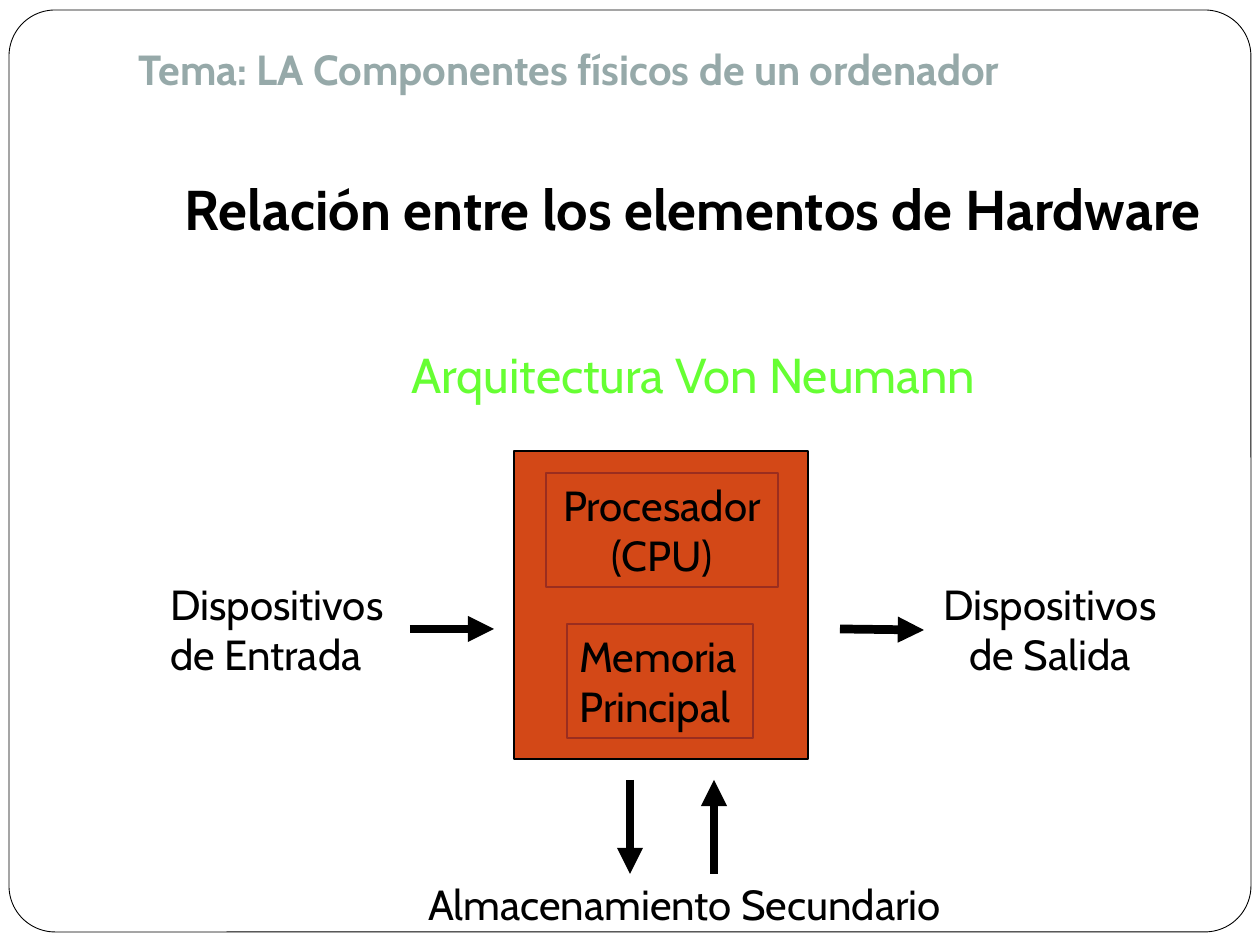
from dataclasses import dataclass
from typing import Optional

import lxml.etree
import pptx
import pptx.dml.color
import pptx.enum.shapes
import pptx.enum.text
import pptx.oxml.ns
import pptx.util

EMU_PER_PX = 914400 / 126
FONT = "Cabin"
BLACK = "000000"
WHITE = "FFFFFF"
BRICK = "D34817"
MAROON = "9B2D1F"
SHAPE = pptx.enum.shapes.MSO_SHAPE
LEFT = pptx.enum.text.PP_ALIGN.LEFT
CENTER = pptx.enum.text.PP_ALIGN.CENTER


@dataclass(frozen=True)
class Box:
    left: int
    top: int
    width: int
    height: int


@dataclass(frozen=True)
class Label:
    text: str
    box: Box
    align: int = CENTER
    size: int = 24
    color: str = BLACK
    bold: bool = False
    wrap: bool = False
    outline: Optional[str] = None


@dataclass(frozen=True)
class Arrow:
    x1: int
    y1: int
    x2: int
    y2: int


HEADING = Label("Relación entre los elementos de Hardware",
                Box(126, 168, 1134, 147), size=32, bold=True, wrap=True)

LABELS = [
    Label("Tema: LA Componentes físicos de un ordenador",
          Box(126, 37, 1028, 63), LEFT, color="96A9A9", bold=True),
    Label("Arquitectura Von Neumann", Box(126, 338, 1134, 72),
          size=28, color="66FF33", wrap=True),
    Label("Dispositivos\nde Entrada", Box(158, 572, 243, 113), LEFT),
    Label("Dispositivos de Salida", Box(924, 572, 252, 113), wrap=True),
    Label("Almacenamiento Secundario", Box(410, 872, 549, 63)),
    Label("Procesador\n(CPU)", Box(546, 473, 232, 114), outline=MAROON),
    Label("Memoria\nPrincipal", Box(567, 624, 186, 114), LEFT, outline=MAROON),
]

ARROWS = [
    Arrow(410, 629, 494, 629),
    Arrow(840, 629, 924, 630),
    Arrow(714, 874, 714, 780),
    Arrow(630, 780, 630, 874),
]


def px(length: int) -> int:
    return round(length * EMU_PER_PX)


def rgb(color: str) -> pptx.dml.color.RGBColor:
    return pptx.dml.color.RGBColor.from_string(color)


def place(box: Box) -> tuple[int, int, int, int]:
    return px(box.left), px(box.top), px(box.width), px(box.height)


def write(shape, label: Label) -> None:
    frame = shape.text_frame
    frame.text = label.text
    frame.word_wrap = label.wrap
    frame.auto_size = pptx.enum.text.MSO_AUTO_SIZE.NONE
    frame.vertical_anchor = pptx.enum.text.MSO_ANCHOR.TOP
    for paragraph in frame.paragraphs:
        paragraph.alignment = label.align
        for run in paragraph.runs:
            run.font.name = FONT
            run.font.size = pptx.util.Pt(label.size)
            run.font.bold = label.bold
            run.font.color.rgb = rgb(label.color)


def add_panel(slide, preset: int, box: Box, fill: Optional[str],
              line: str, weight: float):
    panel = slide.shapes.add_shape(preset, *place(box))
    panel.shadow.inherit = False
    if fill:
        panel.fill.solid()
        panel.fill.fore_color.rgb = rgb(fill)
    else:
        panel.fill.background()
    panel.line.color.rgb = rgb(line)
    panel.line.width = pptx.util.Pt(weight)
    return panel


def add_label(slide, label: Label) -> None:
    if label.outline:
        shape = add_panel(slide, SHAPE.RECTANGLE, label.box, None,
                          label.outline, 0.75)
    else:
        shape = slide.shapes.add_textbox(*place(label.box))
    write(shape, label)


def add_arrow(slide, arrow: Arrow) -> None:
    connector = slide.shapes.add_connector(
        pptx.enum.shapes.MSO_CONNECTOR.STRAIGHT,
        px(arrow.x1), px(arrow.y1), px(arrow.x2), px(arrow.y2))
    connector.line.color.rgb = rgb(BLACK)
    connector.line.width = pptx.util.Pt(5)
    qn = pptx.oxml.ns.qn
    properties = connector.element.spPr
    lxml.etree.SubElement(properties.find(qn("a:ln")), qn("a:tailEnd"),
                          type="triangle")
    lxml.etree.SubElement(properties, qn("a:effectLst"))


def main() -> None:
    deck = pptx.Presentation()
    deck.slide_width = px(1260)
    deck.slide_height = px(945)
    slide = deck.slides.add_slide(deck.slide_layouts[5])

    heading = slide.shapes.title
    heading.left, heading.top, heading.width, heading.height = place(HEADING.box)
    write(heading, HEADING)

    border = add_panel(slide, SHAPE.ROUNDED_RECTANGLE, Box(9, 10, 1242, 922),
                       WHITE, BLACK, 0.5)
    border.adjustments[0] = 0.05
    heading.element.addprevious(border.element)

    add_panel(slide, SHAPE.RECTANGLE, Box(514, 451, 294, 308),
              BRICK, BLACK, 0.75)
    for label in LABELS:
        add_label(slide, label)
    for arrow in ARROWS:
        add_arrow(slide, arrow)

    deck.save("out.pptx")


if __name__ == "__main__":
    main()
